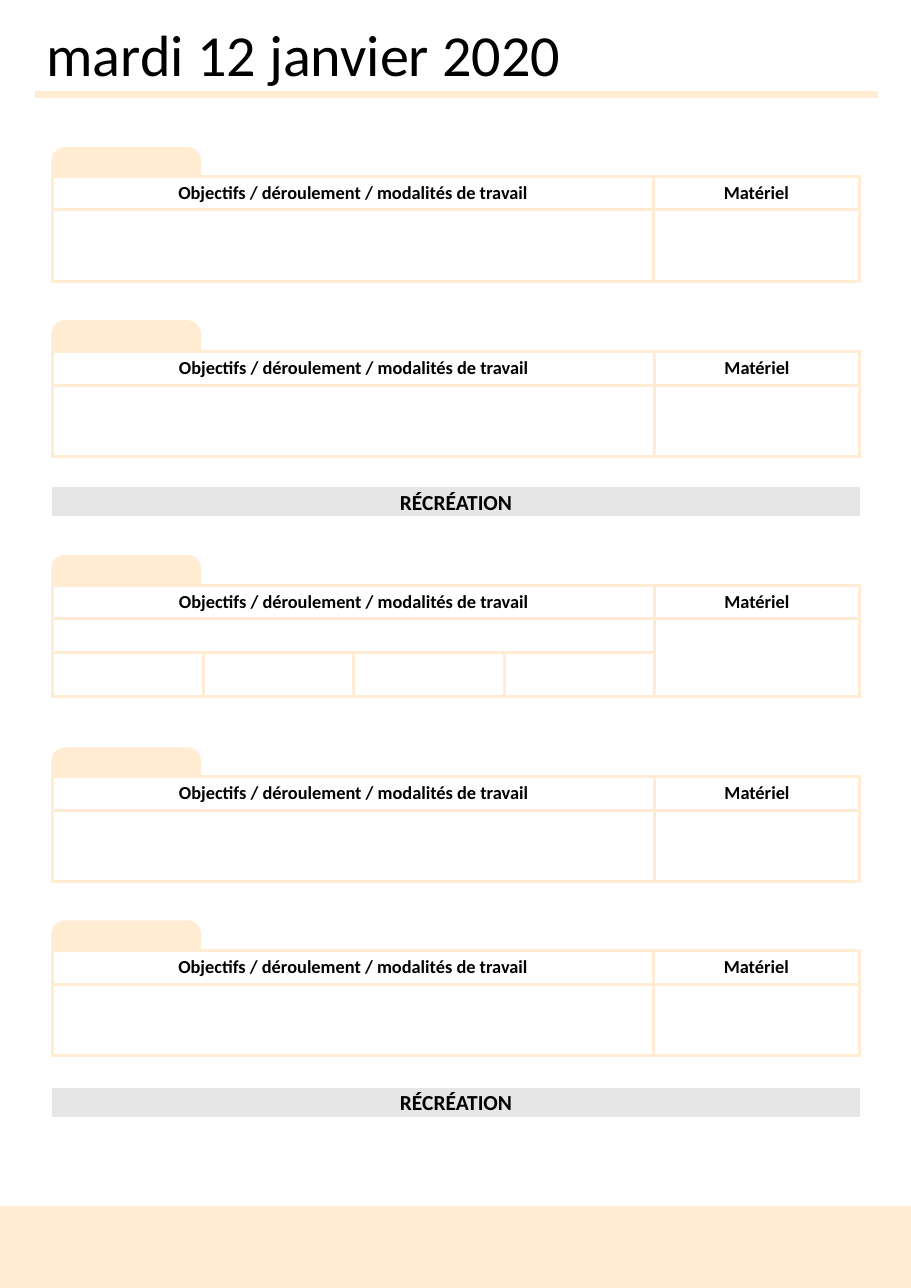
from dataclasses import dataclass
from lxml import etree
from pptx import Presentation
from pptx import util as u
from pptx.dml.color import RGBColor
from pptx.enum import shapes, text
from pptx.oxml import ns

# Content
DATE = "mardi 12 janvier 2020"
HEADINGS = ("Objectifs / déroulement / modalités de travail", "Matériel")
BREAK = "RÉCRÉATION"

# Lessons: tab top, table top, material width, number of group columns (cm)
LESSONS = [
    (3.43, 4.06, 4.75, 1),
    (7.42, 8.1, 4.72, 1),
    (12.83, 13.49, 4.72, 4),
    (17.27, 17.91, 4.72, 1),
    (21.26, 21.92, 4.75, 1),
]
BREAK_TOPS = (11.25, 25.1)


@dataclass(frozen=True)
class Theme:
    font: str = "Calibri"
    accent: str = "FFECD3"
    grey: str = "E7E6E6"
    white: str = "FFFFFF"
    ink: str = "000000"
    title_pt: int = 38
    break_pt: int = 14
    heading_pt: int = 12
    border_pt: float = 2.25


T = Theme()
PAGE_W, PAGE_H = 21.0, 29.7
LEFT, WIDTH = 1.22, 18.59
TAB_W, BAR_H = 3.38, 0.64
HEAD_H, BODY_H, GROUP_H = 0.78, 1.64, 1.01
FOOTER_H = 1.88


def rgb(value):
    return RGBColor.from_string(value)


def write(tf, words, size, bold=False, align=text.PP_ALIGN.CENTER):
    p = tf.paragraphs[0]
    p.alignment = align
    r = p.add_run()
    r.text = words
    r.font.name, r.font.size, r.font.bold = T.font, u.Pt(size), bold
    r.font.color.rgb = rgb(T.ink)


def block(s, kind, x, y, w, h, color, line_pt):
    sp = s.shapes.add_shape(kind, u.Cm(x), u.Cm(y), u.Cm(w), u.Cm(h))
    sp.shadow.inherit = False
    sp.fill.solid()
    sp.fill.fore_color.rgb = rgb(color)
    sp.line.color.rgb = rgb(color)
    sp.line.width = u.Pt(line_pt)
    return sp


def style_cell(cell):
    cell.fill.solid()
    cell.fill.fore_color.rgb = rgb(T.white)
    cell.vertical_anchor = text.MSO_ANCHOR.MIDDLE
    tc_pr = cell._tc.get_or_add_tcPr()
    for i, side in enumerate(("a:lnL", "a:lnR", "a:lnT", "a:lnB")):
        ln = etree.Element(ns.qn(side), w=str(u.Pt(T.border_pt)))
        fill = etree.SubElement(ln, ns.qn("a:solidFill"))
        etree.SubElement(fill, ns.qn("a:srgbClr"), val=T.accent)
        tc_pr.insert(i, ln)


def add_lesson(s, tab_top, top, material_w, groups):
    # Table grid
    heights = [HEAD_H, BODY_H] if groups == 1 else [HEAD_H, HEAD_H, GROUP_H]
    widths = [(WIDTH - material_w) / groups] * groups + [material_w]
    table = s.shapes.add_table(len(heights), len(widths), u.Cm(LEFT), u.Cm(top),
                               u.Cm(WIDTH), u.Cm(sum(heights))).table
    table.first_row = table.horz_banding = False
    for col, w in zip(table.columns, widths):
        col.width = u.Cm(w)
    for row, h in zip(table.rows, heights):
        row.height = u.Cm(h)
        for cell in row.cells:
            style_cell(cell)
            if row is not table.rows[0]:
                cell.margin_top = cell.margin_bottom = 0

    # Headings keep their usual margins
    for i, words in zip((0, groups), HEADINGS):
        cell = table.cell(0, i)
        cell.margin_top = cell.margin_bottom = u.Cm(0.12)
        write(cell.text_frame, words, T.heading_pt, True)

    # Group columns sit below a shared row
    if groups > 1:
        for i in (0, 1):
            table.cell(i, 0).merge(table.cell(i, groups - 1))
        table.cell(1, groups).merge(table.cell(2, groups))

    # Folder tab
    tab = block(s, shapes.MSO_SHAPE.ROUND_2_SAME_RECTANGLE,
                LEFT, tab_top, TAB_W, BAR_H, T.accent, 2)
    tab.adjustments[0] = 0.43


def main():
    prs = Presentation()
    prs.slide_width, prs.slide_height = u.Cm(PAGE_W), u.Cm(PAGE_H)
    s = prs.slides.add_slide(prs.slide_layouts[5])

    # Title and rule
    title = s.shapes.title
    title.left, title.top = u.Cm(0.81), u.Cm(0.3)
    title.width, title.height = u.Cm(15.9), u.Cm(1.88)
    title.text_frame.word_wrap = True
    title.text_frame.auto_size = text.MSO_AUTO_SIZE.NONE
    title.text_frame.vertical_anchor = text.MSO_ANCHOR.TOP
    write(title.text_frame, DATE, T.title_pt, align=text.PP_ALIGN.LEFT)
    rule = s.shapes.add_connector(shapes.MSO_CONNECTOR.STRAIGHT, u.Cm(0.81),
                                  u.Cm(2.18), u.Cm(20.24), u.Cm(2.18))
    rule.line.color.rgb = rgb(T.accent)
    rule.line.width = u.Pt(4.75)
    etree.SubElement(rule._element.spPr, ns.qn("a:effectLst"))

    # Lessons
    for lesson in LESSONS:
        add_lesson(s, *lesson)

    # Breaks
    for top in BREAK_TOPS:
        bar = block(s, shapes.MSO_SHAPE.RECTANGLE, LEFT, top, WIDTH, BAR_H, T.grey, 1)
        bar.text_frame.vertical_anchor = text.MSO_ANCHOR.MIDDLE
        write(bar.text_frame, BREAK, T.break_pt, True)

    # Footer band
    block(s, shapes.MSO_SHAPE.RECTANGLE, 0, PAGE_H - FOOTER_H, PAGE_W, FOOTER_H, T.accent, 1)
    prs.save("out.pptx")


if __name__ == "__main__":
    main()
